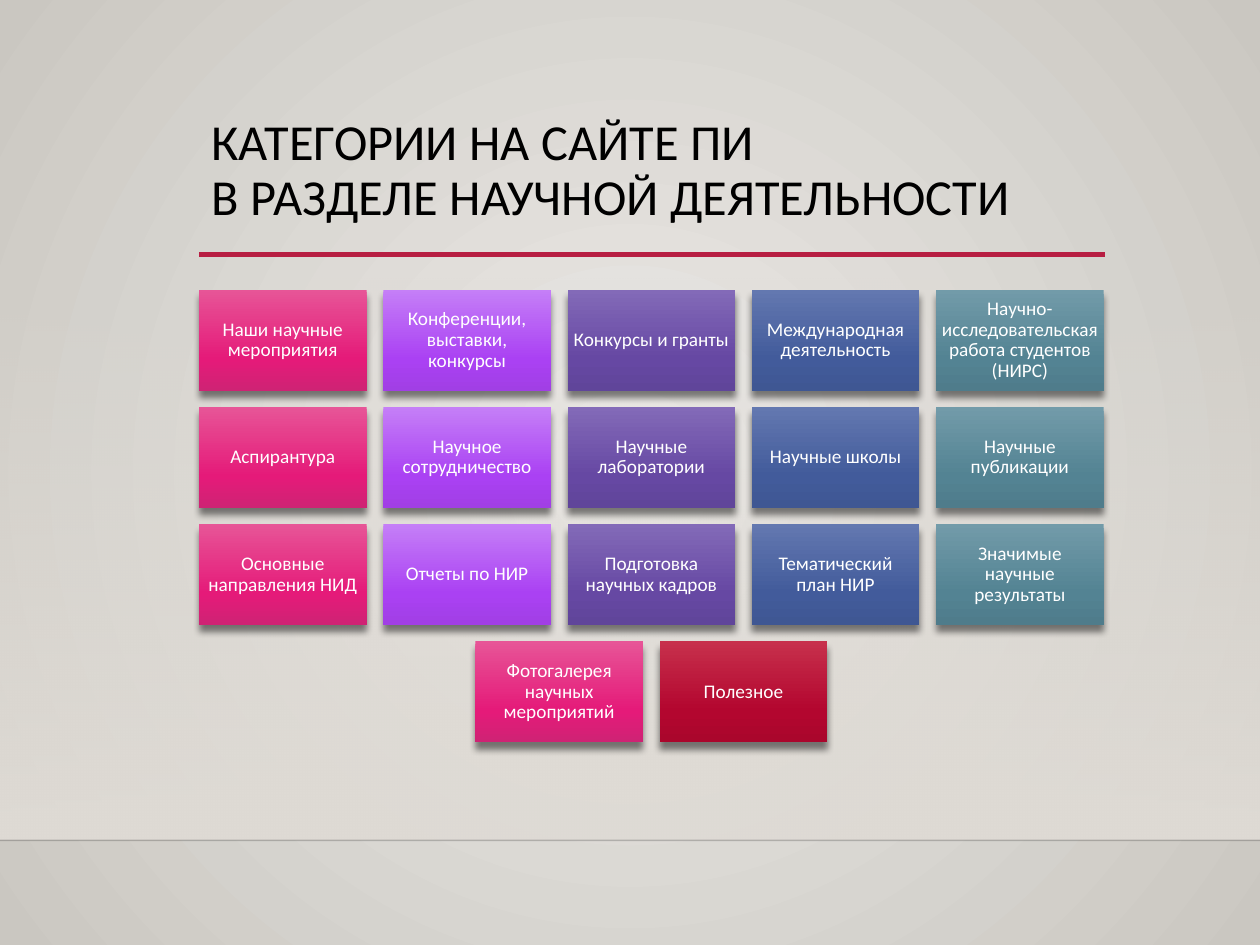
from lxml import etree
from pptx import Presentation
from pptx.dml.color import RGBColor
from pptx.enum.shapes import MSO_CONNECTOR, MSO_SHAPE
from pptx.enum.text import MSO_ANCHOR, PP_ALIGN
from pptx.oxml.ns import qn
from pptx.util import Inches, Pt

BLACK = RGBColor(0x00, 0x00, 0x00)
WHITE = RGBColor(0xFF, 0xFF, 0xFF)
CRIMSON = RGBColor(0xB7, 0x1E, 0x42)
BACKDROP = [(0, RGBColor(0xEC, 0xEA, 0xE7), 100), (100, RGBColor(0xCA, 0xC7, 0xC1), 100)]
SAND = RGBColor(0xDF, 0xDB, 0xD5)
PINK = (RGBColor(0xE7, 0x55, 0x97), RGBColor(0xE5, 0x1A, 0x79), RGBColor(0xCF, 0x23, 0x74))
VIOLET = (RGBColor(0xC5, 0x7F, 0xF7), RGBColor(0xAA, 0x41, 0xF3), RGBColor(0xA1, 0x3F, 0xE5))
PURPLE = (RGBColor(0x83, 0x6A, 0xB8), RGBColor(0x66, 0x48, 0xA3), RGBColor(0x60, 0x45, 0x9A))
BLUE = (RGBColor(0x63, 0x78, 0xB0), RGBColor(0x42, 0x5B, 0x9B), RGBColor(0x3F, 0x57, 0x93))
TEAL = (RGBColor(0x72, 0x9B, 0xA9), RGBColor(0x53, 0x83, 0x93), RGBColor(0x4F, 0x7C, 0x8B))
RED = (RGBColor(0xC7, 0x30, 0x4C), RGBColor(0xB3, 0x06, 0x2F), RGBColor(0xAA, 0x06, 0x2C))


def set_gradient(fill, parent, stops, radial=False):
    """Fill parent with (position %, colour, opacity %) stops, downward or from the centre."""
    fill.solid()
    gradient = etree.Element(qn("a:gradFill"), rotWithShape="1")
    stop_list = etree.SubElement(gradient, qn("a:gsLst"))
    for position, color, opacity in stops:
        stop = etree.SubElement(stop_list, qn("a:gs"), pos=str(position * 1000))
        rgb = etree.SubElement(stop, qn("a:srgbClr"), val=str(color))
        if opacity < 100:
            etree.SubElement(rgb, qn("a:alpha"), val=str(opacity * 1000))
    if radial:
        center = etree.SubElement(gradient, qn("a:path"), path="circle")
        etree.SubElement(center, qn("a:fillToRect"), l="50000", t="50000", r="50000", b="50000")
    else:
        etree.SubElement(gradient, qn("a:lin"), ang="5400000", scaled="0")
    solid = parent.find(qn("a:solidFill"))
    parent.replace(solid, gradient)


def write_text(shape, text, size, color, align=PP_ALIGN.LEFT, anchor=MSO_ANCHOR.TOP,
               side=0.1, edge=0.05):
    frame = shape.text_frame
    frame.word_wrap = True
    frame.vertical_anchor = anchor
    frame.margin_left = frame.margin_right = Inches(side)
    frame.margin_top = frame.margin_bottom = Inches(edge)
    paragraph = frame.paragraphs[0]
    paragraph.text = text
    paragraph.alignment = align
    paragraph.line_spacing = 0.9
    for run in paragraph.runs:
        run.font.name = "Calibri"
        run.font.size = Pt(size)
        run.font.color.rgb = color


prs = Presentation()
prs.slide_width = Inches(10)
prs.slide_height = Inches(7.5)
slide = prs.slides.add_slide(prs.slide_layouts[6])

# Backdrop: radial glow with a wall fading down to the floor line
background_fill = slide.background.fill
background_fill.solid()
set_gradient(background_fill, slide.element.cSld.find(qn("p:bg")).find(qn("p:bgPr")),
             BACKDROP, radial=True)
wall = slide.shapes.add_shape(MSO_SHAPE.RECTANGLE, 0, Inches(2.2), Inches(10), Inches(4.46))
wall.shadow.inherit = False
wall.line.fill.background()
set_gradient(wall.fill, wall.element.spPr, [(0, SAND, 0), (100, SAND, 100)])

# Floor line and title rule
for left, right, y, color, width, opacity in [
    (0, 10, 6.67, BLACK, 1, 20),
    (1.58, 8.77, 2.02, CRIMSON, 2.5, 100),
]:
    rule = slide.shapes.add_connector(
        MSO_CONNECTOR.STRAIGHT, Inches(left), Inches(y), Inches(right), Inches(y))
    rule.line.color.rgb = color
    rule.line.width = Pt(width)
    etree.SubElement(rule.element.spPr, qn("a:effectLst"))
    if opacity < 100:
        rgb = next(rule.element.spPr.iter(qn("a:srgbClr")))
        etree.SubElement(rgb, qn("a:alpha"), val=str(opacity * 1000))

title = slide.shapes.add_textbox(Inches(1.58), Inches(0.88), Inches(7.19), Inches(1.15))
write_text(title, "КАТЕГОРИИ НА САЙТЕ ПИ\vВ РАЗДЕЛЕ НАУЧНОЙ ДЕЯТЕЛЬНОСТИ", 28.8, BLACK)

# Category tiles, each row centred on the widest one.
# The first row has the longest words, so its side margins are narrower.
COLUMNS = [PINK, VIOLET, PURPLE, BLUE, TEAL]
CATEGORY_ROWS = [
    (COLUMNS, 0.04,
     ["Наши научные мероприятия", "Конференции, выставки, конкурсы", "Конкурсы и гранты",
      "Международная деятельность", "Научно-исследовательская работа студентов (НИРС)"]),
    (COLUMNS, 0.05,
     ["Аспирантура", "Научное сотрудничество", "Научные лаборатории",
      "Научные школы", "Научные публикации"]),
    (COLUMNS, 0.05,
     ["Основные направления НИД", "Отчеты по НИР", "Подготовка научных кадров",
      "Тематический план НИР", "Значимые научные результаты"]),
    ([PINK, RED], 0.05, ["Фотогалерея научных мероприятий", "Полезное"]),
]
GRID_LEFT, GRID_TOP, GRID_WIDTH = 1.58, 2.3, 7.18
TILE_WIDTH, TILE_HEIGHT = 1.33, 0.8
COLUMN_STEP = (GRID_WIDTH - TILE_WIDTH) / (len(COLUMNS) - 1)
ROW_STEP = 0.93

for row, (palettes, side_margin, categories) in enumerate(CATEGORY_ROWS):
    row_left = GRID_LEFT + (len(COLUMNS) - len(categories)) / 2 * COLUMN_STEP
    for column, (palette, category) in enumerate(zip(palettes, categories)):
        tile = slide.shapes.add_shape(
            MSO_SHAPE.RECTANGLE,
            Inches(row_left + column * COLUMN_STEP), Inches(GRID_TOP + row * ROW_STEP),
            Inches(TILE_WIDTH), Inches(TILE_HEIGHT))
        tile.line.fill.background()
        set_gradient(tile.fill, tile.element.spPr,
                     [(position, color, 100) for position, color in zip((0, 69, 100), palette)])
        tile.shadow.inherit = False
        shadow = etree.SubElement(
            tile.element.spPr.find(qn("a:effectLst")), qn("a:outerShdw"),
            blurRad=str(Pt(4)), dist=str(Pt(4)), dir="5400000", rotWithShape="0")
        shadow_color = etree.SubElement(shadow, qn("a:srgbClr"), val=str(BLACK))
        etree.SubElement(shadow_color, qn("a:alpha"), val="48000")
        write_text(tile, category, 11, WHITE, align=PP_ALIGN.CENTER,
                   anchor=MSO_ANCHOR.MIDDLE, side=side_margin)

prs.save("out.pptx")
